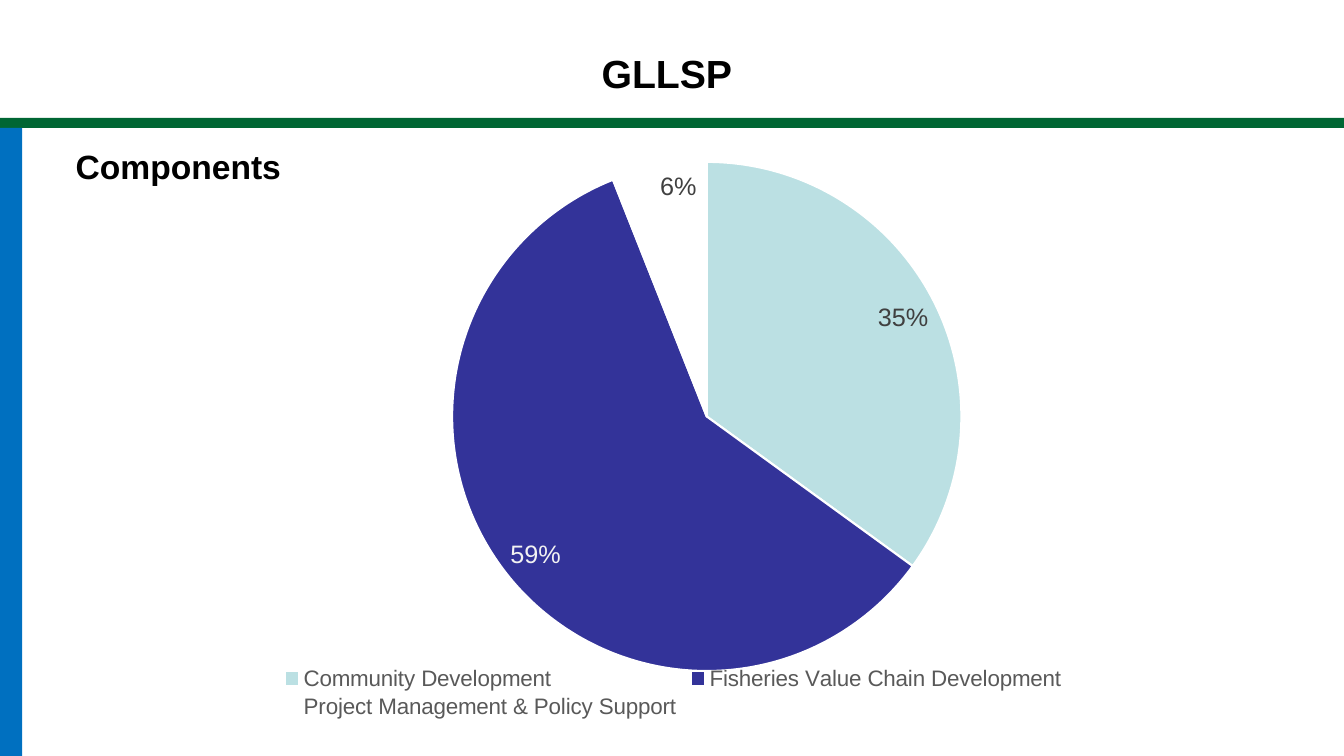
from dataclasses import dataclass

import lxml.etree
import pptx
import pptx.chart.data
import pptx.dml.color
import pptx.enum.chart
import pptx.enum.shapes
import pptx.enum.text
import pptx.oxml
import pptx.oxml.ns
import pptx.util

Inches = pptx.util.Inches
Pt = pptx.util.Pt

FONT = "Arial"
COLORS = {
    "black": "000000",
    "white": "FFFFFF",
    "green": "006633",
    "blue": "0070C0",
    "aqua": "BBE0E3",
    "indigo": "333399",
    "label": "404040",
    "light_label": "F2F2F2",
    "legend": "595959",
}


@dataclass(frozen=True)
class Band:
    left: float
    top: float
    width: float
    height: float
    color: str


@dataclass(frozen=True)
class Component:
    name: str
    share: int
    color: str
    label_color: str


BANDS = [
    Band(0, 1.17, 13.33, 0.1, "green"),
    Band(0, 1.27, 0.22, 6.23, "blue"),
]
COMPONENTS = [
    Component("Community Development", 35, "aqua", "label"),
    Component("Fisheries Value Chain Development", 59, "indigo", "light_label"),
    Component("Project Management & Policy Support", 6, "white", "label"),
]
PLOT_AREA = {"x": 0.317, "y": 0.039, "w": 0.421, "h": 0.871}


def rgb(color: str) -> pptx.dml.color.RGBColor:
    return pptx.dml.color.RGBColor.from_string(COLORS[color])


def format_font(font, size: float, color: str, bold: bool = False) -> None:
    font.name = FONT
    font.size = Pt(size)
    font.bold = bold
    font.color.rgb = rgb(color)


def write_text(frame, text: str, *, size: float, color: str = "black", bold: bool = True,
               align=pptx.enum.text.PP_ALIGN.LEFT, inset_top: float = 0.05,
               inset_right: float = 0.1) -> None:
    frame.word_wrap = True
    frame.auto_size = pptx.enum.text.MSO_AUTO_SIZE.NONE
    frame.vertical_anchor = pptx.enum.text.MSO_ANCHOR.TOP
    frame.margin_top = Inches(inset_top)
    frame.margin_right = Inches(inset_right)
    paragraph = frame.paragraphs[0]
    paragraph.alignment = align
    paragraph.line_spacing = 1.0
    paragraph.space_before = Pt(0)
    run = paragraph.add_run()
    run.text = text
    format_font(run.font, size, color, bold)


def draw_band(slide, band: Band) -> None:
    bar = slide.shapes.add_shape(
        pptx.enum.shapes.MSO_SHAPE.RECTANGLE,
        Inches(band.left), Inches(band.top), Inches(band.width), Inches(band.height))
    bar.shadow.inherit = False
    bar.fill.solid()
    bar.fill.fore_color.rgb = rgb(band.color)
    bar.line.fill.background()


def place_plot(chart, area: dict[str, float]) -> None:
    plot_area = chart.plots[0]._element.getparent()
    for automatic in plot_area.findall(pptx.oxml.ns.qn("c:layout")):
        plot_area.remove(automatic)
    layout = pptx.oxml.parse_xml(f"<c:layout {pptx.oxml.ns.nsdecls('c')}/>")
    manual = lxml.etree.SubElement(layout, pptx.oxml.ns.qn("c:manualLayout"))
    settings = {"layoutTarget": "inner", "xMode": "edge", "yMode": "edge", **area}
    for tag, value in settings.items():
        lxml.etree.SubElement(manual, pptx.oxml.ns.qn(f"c:{tag}")).set("val", str(value))
    plot_area.insert(0, layout)


def draw_shares(slide) -> None:
    shares = pptx.chart.data.CategoryChartData()
    shares.categories = [component.name for component in COMPONENTS]
    shares.add_series("Series 1", [component.share for component in COMPONENTS])
    chart = slide.shapes.add_chart(
        pptx.enum.chart.XL_CHART_TYPE.PIE,
        Inches(0.68), Inches(1.38), Inches(12), Inches(5.8), shares).chart
    format_font(chart.font, 10, "black")
    chart.has_title = False
    chart.has_legend = True
    chart.legend.position = pptx.enum.chart.XL_LEGEND_POSITION.BOTTOM
    chart.legend.include_in_layout = False
    format_font(chart.legend.font, 16, "legend")
    place_plot(chart, PLOT_AREA)

    pie = chart.plots[0]
    pie.vary_by_categories = True
    pie.has_data_labels = True
    labels = pie.data_labels
    labels.show_percentage = True
    labels.show_value = False
    labels.number_format = "0%"
    labels.number_format_is_linked = False
    labels.position = pptx.enum.chart.XL_LABEL_POSITION.INSIDE_END
    format_font(labels.font, 18, "label")

    for index, component in enumerate(COMPONENTS):
        point = pie.series[0].points[index]
        point.format.fill.solid()
        point.format.fill.fore_color.rgb = rgb(component.color)
        point.format.line.color.rgb = rgb("white")
        point.format.line.width = Pt(1.5)
        label = point.data_label
        format_font(label.font, 18, component.label_color)
        label.position = pptx.enum.chart.XL_LABEL_POSITION.INSIDE_END
        flags = label._dLbl
        for tag, shown in (("showVal", "0"), ("showPercent", "1")):
            flags.find(pptx.oxml.ns.qn(f"c:{tag}")).set("val", shown)


def main() -> None:
    deck = pptx.Presentation()
    deck.slide_width = Inches(13.33)
    deck.slide_height = Inches(7.5)
    slide = deck.slides.add_slide(deck.slide_layouts[5])

    for band in BANDS:
        draw_band(slide, band)

    project = slide.shapes.add_textbox(Inches(3.03), Inches(0.4), Inches(7.27), Inches(0.67))
    write_text(project.text_frame, "GLLSP", size=28, inset_top=0.09, inset_right=0.2,
               align=pptx.enum.text.PP_ALIGN.CENTER)

    title = slide.shapes.title
    title.left, title.top = Inches(0.65), Inches(1.38)
    title.width, title.height = Inches(12), Inches(0.67)
    write_text(title.text_frame, "Components", size=24, inset_top=0.07)

    draw_shares(slide)
    deck.save("out.pptx")


if __name__ == "__main__":
    main()
